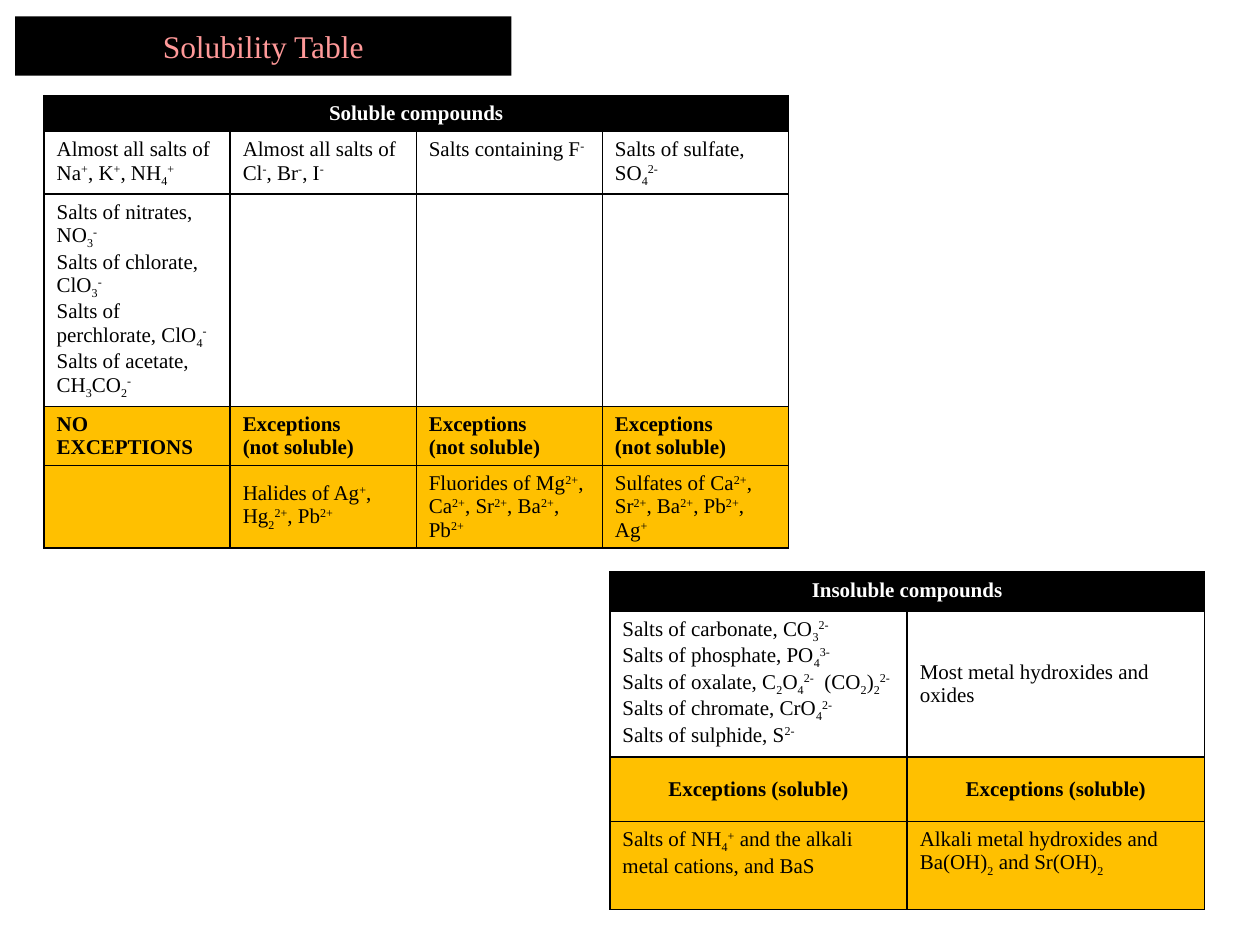
from lxml.etree import SubElement
from pptx import Presentation
from pptx.dml.color import RGBColor
from pptx.enum.shapes import MSO_SHAPE
from pptx.enum.text import MSO_ANCHOR, PP_ALIGN
from pptx.oxml.ns import qn
from pptx.util import Inches, Pt

COLORS = {"black": "000000", "white": "FFFFFF", "pink": "FF9999", "gold": "FFC000"}
FONT = "Times New Roman"


class Board:
    """Style and current slide."""

    def __init__(self, slide):
        self.slide = slide

    def color(self, name):
        return RGBColor.from_string(COLORS[name])

    def paint(self, shape, name):
        shape.fill.solid()
        shape.fill.fore_color.rgb = self.color(name)

    def style(self, font, size, color, bold=False):
        font.name = FONT
        font.size = Pt(size)
        font.bold = bold
        font.color.rgb = self.color(color)

    def title(self, text, left, top, width, height):
        box = self.slide.shapes.add_shape(
            MSO_SHAPE.RECTANGLE, Inches(left), Inches(top), Inches(width), Inches(height))
        box.shadow.inherit = False
        box.line.fill.background()
        self.paint(box, "black")
        frame = box.text_frame
        frame.text = text
        frame.vertical_anchor = MSO_ANCHOR.MIDDLE
        para = frame.paragraphs[0]
        para.alignment = PP_ALIGN.CENTER
        self.style(para.runs[0].font, 18, "pink")

    def formula(self, para, text, color, bold):
        """Braces mark an index: a charge is raised, a count is lowered."""
        for part in text.split("{"):
            mark, brace, rest = part.partition("}")
            for piece, index in ((mark, bool(brace)), (rest, False)):
                if piece:
                    run = para.add_run()
                    run.text = piece
                    self.style(run.font, 12, color, bold)
                    if index:
                        shift = -25000 if piece.isdigit() else 30000
                        run.font._element.set("baseline", str(shift))

    def border(self, cell):
        props = cell._tc.get_or_add_tcPr()
        for side in ("lnL", "lnR", "lnT", "lnB"):
            line = SubElement(props, qn("a:" + side), w=str(Pt(1)))
            fill = SubElement(line, qn("a:solidFill"))
            SubElement(fill, qn("a:srgbClr"), val=COLORS["black"])

    def cell(self, cell, text, fill=None, color="black", bold=False,
             middle=False, center=False):
        self.border(cell)
        if fill:
            self.paint(cell, fill)
        else:
            cell.fill.background()
        cell.vertical_anchor = MSO_ANCHOR.MIDDLE if middle else MSO_ANCHOR.TOP
        frame = cell.text_frame
        for i, line in enumerate(text.split("\n")):
            para = frame.add_paragraph() if i else frame.paragraphs[0]
            para.font.size = Pt(12)
            para.alignment = PP_ALIGN.CENTER if center else PP_ALIGN.LEFT
            self.formula(para, line, color, bold)

    def table(self, head, rows, left, top, width, heights, bold, middle, center=()):
        """The last two rows hold the exceptions; middle and center list (row, column)."""
        count = len(rows[0])
        table = self.slide.shapes.add_table(
            len(heights), count, Inches(left), Inches(top),
            Inches(width * count), Inches(sum(heights))).table
        table.first_row = table.horz_banding = False
        for col in table.columns:
            col.width = Inches(width)
        for row, height in zip(table.rows, heights):
            row.height = Inches(height)
        table.cell(0, 0).merge(table.cell(0, count - 1))
        for c in range(count):
            self.cell(table.cell(0, c), "" if c else head, "black", "white", True, center=True)
        for r, texts in enumerate(rows, 1):
            fill = "gold" if r > len(rows) - 2 else None
            for c, text in enumerate(texts):
                self.cell(table.cell(r, c), text, fill, bold=r == bold,
                          middle=(r, c) in middle, center=(r, c) in center)


def main():
    deck = Presentation()
    deck.slide_width, deck.slide_height = Inches(10), Inches(7.5)
    board = Board(deck.slides.add_slide(deck.slide_layouts[6]))

    board.title("Solubility Table", 0.12, 0.13, 3.94, 0.47)

    # Soluble compounds
    nitrates = ("Salts of nitrates, NO{3}{-}\nSalts of chlorate, ClO{3}{-}\n"
                "Salts of perchlorate, ClO{4}{-}\nSalts of acetate, CH{3}CO{2}{-}")
    board.table("Soluble compounds", [
        ["Almost all salts of Na{+}, K{+}, NH{4}{+}",
         "Almost all salts of Cl{-}, Br{-}, I{-}",
         "Salts containing F{-}",
         "Salts of sulfate, SO{4}{2-}"],
        [nitrates, "", "", ""],
        ["NO EXCEPTIONS"] + ["Exceptions\n(not soluble)"] * 3,
        ["",
         "Halides of Ag{+}, Hg{2}{2+}, Pb{2+}",
         "Fluorides of Mg{2+}, Ca{2+}, Sr{2+}, Ba{2+}, Pb{2+}",
         "Sulfates of Ca{2+}, Sr{2+}, Ba{2+}, Pb{2+}, Ag{+}"],
    ], 0.35, 0.76, 1.477, [0.28, 0.44, 1.52, 0.44, 0.62],
        bold=3, middle=[(3, 0), (4, 1), (4, 2), (4, 3)])

    # Insoluble compounds
    salts = ("Salts of carbonate, CO{3}{2-}\nSalts of phosphate, PO{4}{3-}\n"
             "Salts of oxalate, C{2}O{4}{2-}  (CO{2}){2}{2-}\n"
             "Salts of chromate, CrO{4}{2-}\nSalts of sulphide, S{2-}")
    pair = [(2, 0), (2, 1)]
    board.table("Insoluble compounds", [
        [salts, "Most metal hydroxides and oxides"],
        ["Exceptions (soluble)"] * 2,
        ["Salts of NH{4}{+} and the alkali metal cations, and BaS",
         "Alkali metal hydroxides and Ba(OH){2} and Sr(OH){2}"],
    ], 4.84, 4.54, 2.36, [0.31, 1.16, 0.51, 0.7],
        bold=2, middle=[(1, 1)] + pair, center=pair)

    deck.save("out.pptx")


if __name__ == "__main__":
    main()
